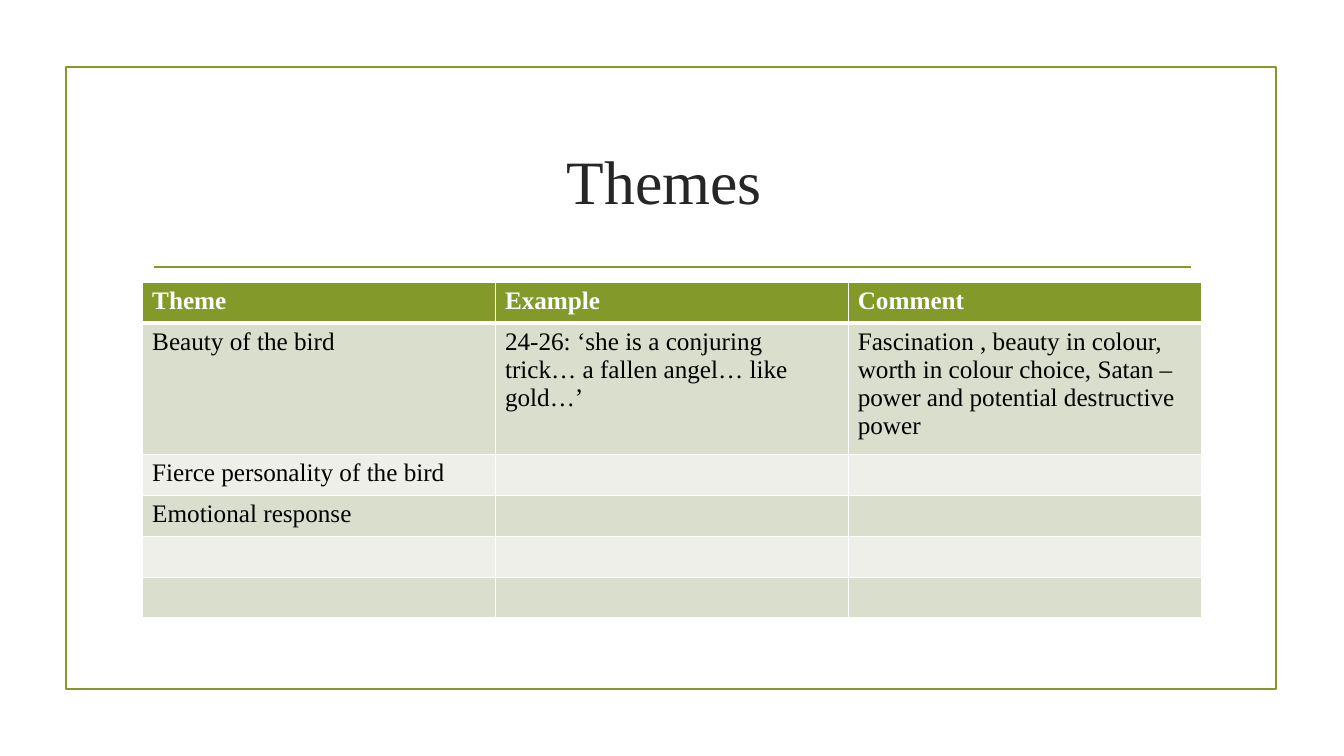
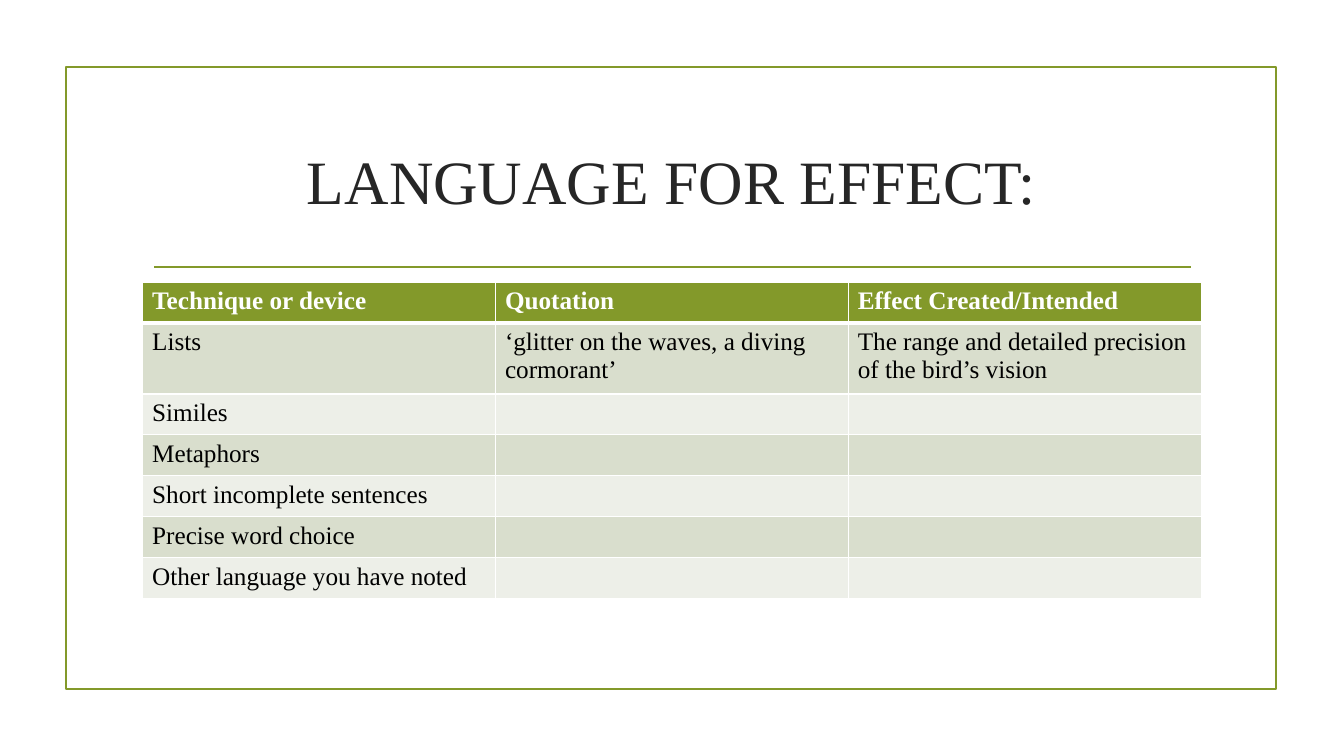
from lxml import etree
from pptx import Presentation
from pptx.dml.color import RGBColor
from pptx.enum.shapes import MSO_CONNECTOR, MSO_SHAPE
from pptx.enum.text import MSO_ANCHOR, PP_ALIGN
from pptx.oxml.ns import qn
from pptx.util import Pt

# Shared style
PX = 9525  # EMU in one px, 96 px to the inch
FONT = "Times New Roman"
OLIVE = RGBColor(0x83, 0x99, 0x2A)
SAGE = RGBColor(0xD9, 0xDE, 0xCD)
PALE = RGBColor(0xED, 0xEF, 0xE8)
WHITE = RGBColor(0xFF, 0xFF, 0xFF)
BLACK = RGBColor(0, 0, 0)
CHARCOAL = RGBColor(0x26, 0x26, 0x26)
LEFT, CENTER = PP_ALIGN.LEFT, PP_ALIGN.CENTER
MIDDLE = MSO_ANCHOR.MIDDLE
STRAIGHT = MSO_CONNECTOR.STRAIGHT
RECTANGLE = MSO_SHAPE.RECTANGLE

# Table layout
TABLE_LEFT, TABLE_TOP, TABLE_WIDTH = 136, 269, 1008
ROW_HEIGHT = 39
CELL_MARGIN = 9

# Slide content: title, then table rows with the header first
THEMES = ("Themes ", [
    ("Theme", "Example", "Comment"),
    ("Beauty of the bird",
     "24-26: ‘she is a conjuring trick… a fallen angel… like gold…’",
     "Fascination , beauty in colour, worth in colour choice, Satan – "
     "power and potential destructive power"),
    ("Fierce personality of the bird", "", ""),
    ("Emotional response", "", ""),
    ("", "", ""),
    ("", "", ""),
])
LANGUAGE = ("LANGUAGE FOR EFFECT:", [
    ("Technique or device", "Quotation", "Effect Created/Intended"),
    ("Lists", "‘glitter on the waves, a diving cormorant’",
     "The range and detailed precision of the bird’s vision"),
    ("Similes", "", ""),
    ("Metaphors", "", ""),
    ("Short incomplete sentences", "", ""),
    ("Precise word choice", "", ""),
    ("Other language you have noted", "", ""),
])


def px(*lengths):
    return [length * PX for length in lengths]


def write_text(frame, text, size=18, color=BLACK, bold=False, align=LEFT):
    para = frame.paragraphs[0]
    para.alignment = align
    span = para.add_run()
    span.text = text
    span.font.name = FONT
    span.font.size = Pt(size)
    span.font.bold = bold
    span.font.color.rgb = color


def style_line(line):
    line.color.rgb = OLIVE
    line.width = Pt(1.25)


def add_frame(page):
    frame = page.shapes.add_shape(RECTANGLE, *px(63, 64, 1152, 592))
    frame.shadow.inherit = False
    frame.fill.background()
    style_line(frame.line)


def add_rule(page):
    rule = page.shapes.add_connector(STRAIGHT, *px(147, 254, 1134, 254))
    style_line(rule.line)
    etree.SubElement(rule.line._get_or_add_ln().getparent(), qn("a:effectLst"))


def add_title(page, title):
    box = page.shapes.add_textbox(*px(TABLE_LEFT, 103, TABLE_WIDTH, 137))
    box.text_frame.word_wrap = True
    box.text_frame.vertical_anchor = MIDDLE
    write_text(box.text_frame, title, size=44, color=CHARCOAL, align=CENTER)


def set_borders(cell, top=1, bottom=1):
    properties = cell._tc.get_or_add_tcPr()
    for side, width in (("L", 1), ("R", 1), ("T", top), ("B", bottom)):
        border = etree.SubElement(properties, qn(f"a:ln{side}"), w=str(Pt(width)))
        solid = etree.SubElement(border, qn("a:solidFill"))
        etree.SubElement(solid, qn("a:srgbClr"), val=str(WHITE))


def style_cell(cell, row_index):
    # A thick border parts the header from the banded rows
    set_borders(cell, top=3 if row_index == 1 else 1,
                bottom=3 if row_index == 0 else 1)
    cell.fill.solid()
    if row_index == 0:
        cell.fill.fore_color.rgb = OLIVE
    else:
        cell.fill.fore_color.rgb = SAGE if row_index % 2 else PALE
    cell.margin_left = cell.margin_right = CELL_MARGIN * PX


def add_table(page, rows):
    table = page.shapes.add_table(
        len(rows), len(rows[0]),
        *px(TABLE_LEFT, TABLE_TOP, TABLE_WIDTH, ROW_HEIGHT * len(rows))).table
    for row_index, texts in enumerate(rows):
        header = row_index == 0
        for column_index, text in enumerate(texts):
            cell = table.cell(row_index, column_index)
            style_cell(cell, row_index)
            if text:
                write_text(cell.text_frame, text, bold=header,
                           color=WHITE if header else BLACK)


def add_page(deck, title, rows):
    page = deck.slides.add_slide(deck.slide_layouts[6])
    add_frame(page)
    add_rule(page)
    add_title(page, title)
    add_table(page, rows)


def main():
    deck = Presentation()
    deck.slide_width, deck.slide_height = px(1280, 720)
    for title, rows in (THEMES, LANGUAGE):
        add_page(deck, title, rows)
    deck.save("out.pptx")


if __name__ == "__main__":
    main()
